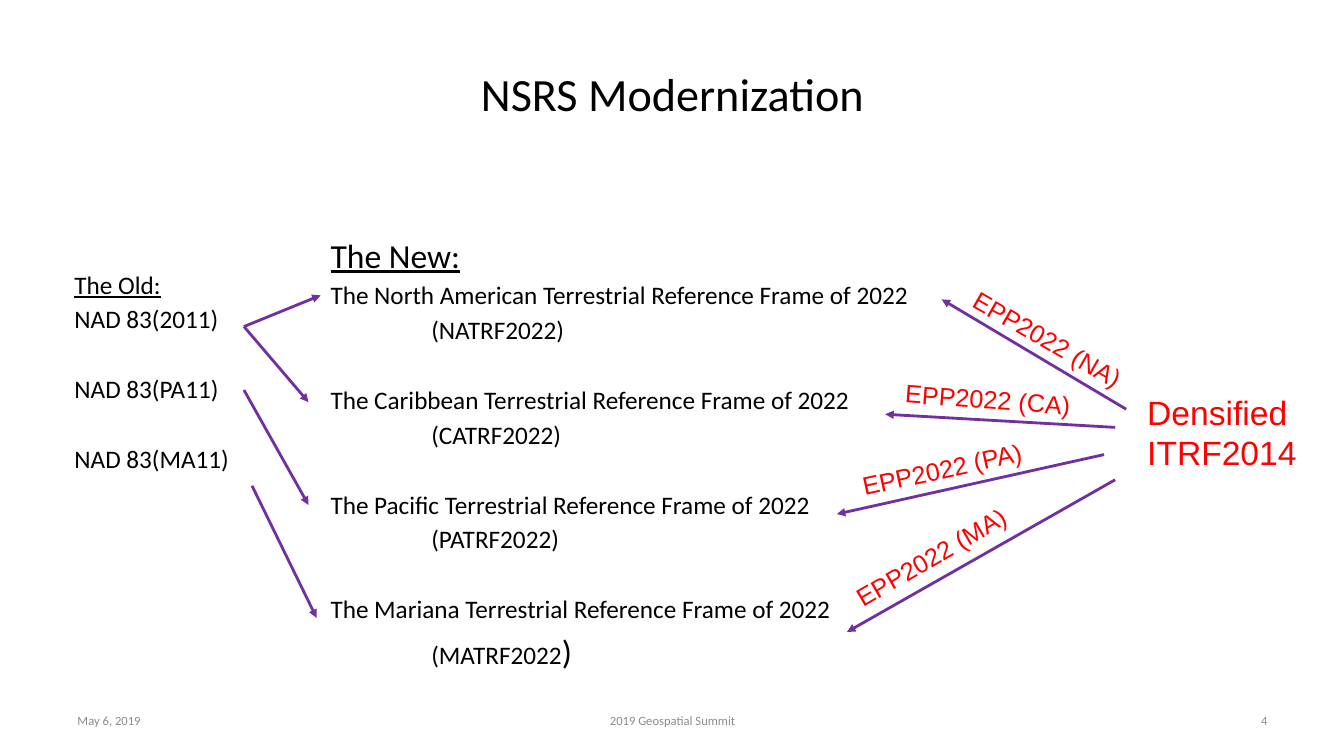
from lxml.etree import SubElement
from pptx import Presentation
from pptx.dml.color import RGBColor
from pptx.enum.shapes import MSO_CONNECTOR as Connector
from pptx.enum.text import MSO_ANCHOR as Anchor, PP_ALIGN as Align
from pptx.oxml.ns import qn
from pptx.util import Inches, Pt

# Content
TITLE = "NSRS Modernization"
FOOTERS = [("May 6, 2019", 0.67, 3.11, Align.LEFT),
           ("2019 Geospatial Summit", 4.56, 4.22, Align.CENTER),
           ("4", 9.56, 3.11, Align.RIGHT)]
OLD_FRAMES = ["NAD 83(2011)", "NAD 83(PA11)", "NAD 83(MA11)"]
NEW_FRAMES = [("North American", "NATRF2022"), ("Caribbean", "CATRF2022"),
              ("Pacific", "PATRF2022"), ("Mariana", "MATRF2022")]
SOURCE = ["Densified", "ITRF2014"]

# Arrows: start x, start y, end x, end y
OLD_TO_NEW = [(2.42, 3.24, 3.18, 2.93), (2.42, 3.24, 3.06, 3.99),
              (2.42, 3.87, 3.06, 5.01), (2.5, 4.82, 3.14, 6.13)]
SOURCE_TO_NEW = [(11.17, 4.06, 9.34, 2.97), (11.06, 4.24, 8.78, 4.11),
                 (10.95, 4.51, 8.3, 5.1), (11.06, 4.76, 8.4, 6.27)]
# Plate labels: plate, left, top, width, rotation
PLATES = [("NA", 9.47, 3.17, 1.86, 29.7), ("CA", 8.88, 3.76, 1.86, 4.3),
          ("PA", 8.44, 4.45, 1.82, -12.3), ("MA", 8.3, 5.32, 1.88, -30.1)]

BLACK, GREY, RED, PURPLE = "000000", "8C8C8C", "FF0000", "7030A0"
LINE_GAP = 3.2                  # points between lines of a list
GROUP_GAP = 2 * LINE_GAP + 22   # one empty line between groups

presentation = Presentation()
presentation.slide_width, presentation.slide_height = Inches(13.33), Inches(7.5)
slide = presentation.slides.add_slide(presentation.slide_layouts[6])


def color(value):
    return RGBColor.from_string(value)


def add_run(paragraph, text, size, font="Calibri", fill=BLACK, underline=False):
    run = paragraph.add_run()
    run.text = text
    run.font.size, run.font.name = Pt(size), font
    run.font.color.rgb = color(fill)
    if underline:
        run.font.underline = True


def add_text(box, lines, wrap=True, anchor=Anchor.TOP, rotation=0, **defaults):
    """Each line is a dict of text and format that overrides the defaults."""
    shape = slide.shapes.add_textbox(*[Inches(length) for length in box])
    shape.rotation = rotation
    frame = shape.text_frame
    frame.word_wrap, frame.vertical_anchor = wrap, anchor
    for index, line in enumerate(lines):
        paragraph = frame.paragraphs[0] if index == 0 else frame.add_paragraph()
        style = {**defaults, **line}
        paragraph.alignment = style.pop("align", Align.LEFT)
        paragraph.space_before = Pt(style.pop("before", 0))
        indent = style.pop("indent", 0)
        if indent:
            paragraph._p.get_or_add_pPr().set("marL", str(Inches(indent)))
        add_run(paragraph, **style)
    return shape


def add_arrow(points):
    arrow = slide.shapes.add_connector(
        Connector.STRAIGHT, *[Inches(length) for length in points])
    arrow.line.color.rgb = color(PURPLE)
    arrow.line.width = Pt(2)
    SubElement(arrow.line._get_or_add_ln(), qn("a:tailEnd"), type="triangle")
    SubElement(arrow._element.spPr, qn("a:effectLst"))


# Title and footer
add_text((0.67, 0.3, 12, 1.25), [dict(text=TITLE)], anchor=Anchor.MIDDLE,
         size=33, align=Align.CENTER)
for text, left, width, align in FOOTERS:
    add_text((left, 6.95, width, 0.4), [dict(text=text)], anchor=Anchor.MIDDLE,
             size=9, fill=GREY, align=align)

# Old frames
old_lines = [dict(text="The Old:", underline=True)]
for index, name in enumerate(OLD_FRAMES):
    old_lines.append(dict(text=name, before=GROUP_GAP if index else LINE_GAP))
add_text((0.64, 2.62, 2.24, 1.94), old_lines, size=18)

# New frames, each with its short name indented below
new_lines = [dict(text="The New:", size=24, underline=True)]
for index, (region, short_name) in enumerate(NEW_FRAMES):
    new_lines += [
        dict(text=f"The {region} Terrestrial Reference Frame of 2022",
             before=GROUP_GAP if index else LINE_GAP),
        dict(text=f"({short_name})", before=LINE_GAP, indent=1)]
new_lines[-1].update(text=f"({NEW_FRAMES[-1][1]}", before=4.8)
new_box = add_text((3.18, 2.28, 6.3, 3.94), new_lines, size=18)
add_run(new_box.text_frame.paragraphs[-1], ")", 24)

# Source frame and plate rotation labels
add_text((11.28, 3.84, 1.7, 0.91), [dict(text=text) for text in SOURCE],
         wrap=False, size=24, font="Arial", fill=RED)
for plate, left, top, width, rotation in PLATES:
    add_text((left, top, width, 0.4), [dict(text=f"EPP2022 ({plate})")],
             wrap=False, rotation=rotation, size=18, font="Arial", fill=RED)

# Arrows
for points in OLD_TO_NEW + SOURCE_TO_NEW:
    add_arrow(points)

presentation.save("out.pptx")
